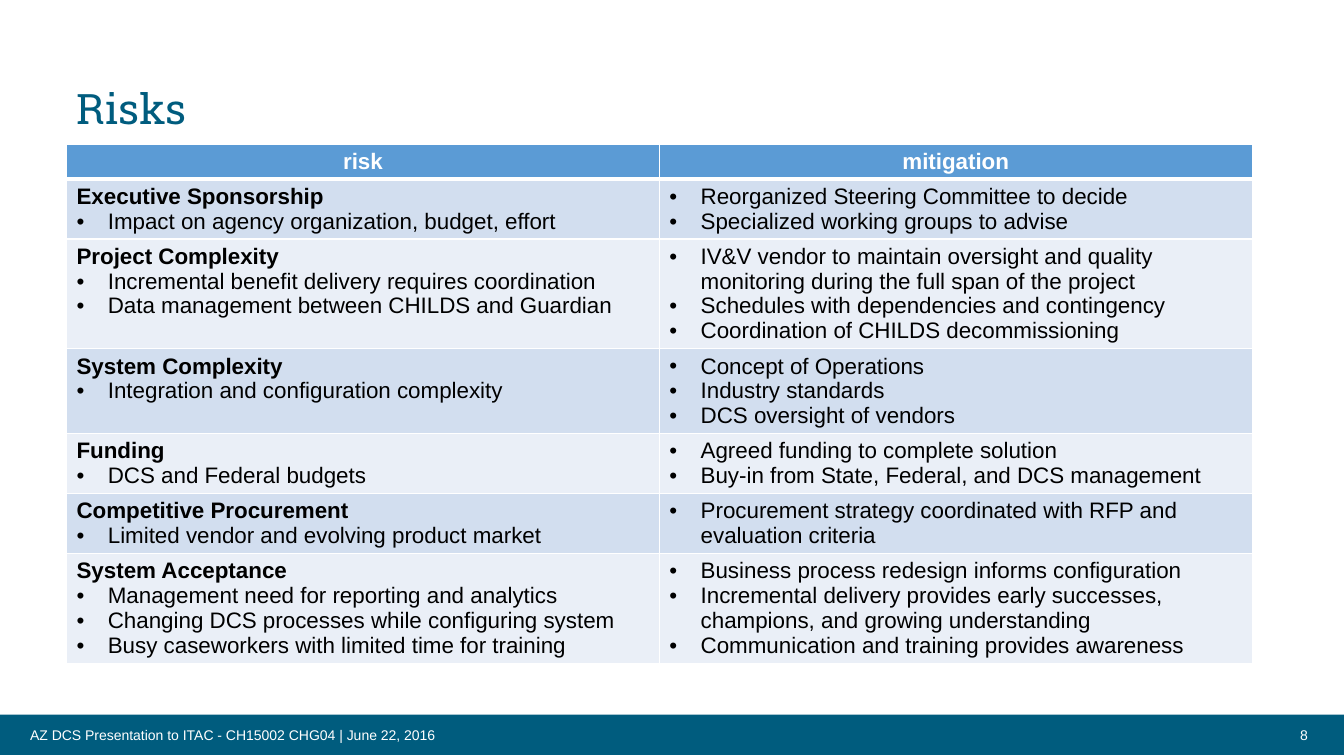
from lxml import etree
from pptx import Presentation
from pptx.dml.color import RGBColor
from pptx.enum import shapes, text
from pptx.oxml import ns
from pptx.util import Inches, Pt

TEAL = RGBColor(0x00, 0x5C, 0x7E)
WHITE = RGBColor(0xFF, 0xFF, 0xFF)
BLACK = RGBColor(0x00, 0x00, 0x00)
HEADER_BLUE = RGBColor(0x5B, 0x9B, 0xD5)
BANDS = (RGBColor(0xD2, 0xDE, 0xEF), RGBColor(0xEA, 0xEF, 0xF7))

HEADINGS = ("risk", "mitigation")
# Each risk: name, its points, its mitigations, row height
RISKS = [
    ("Executive Sponsorship",
     ["Impact on agency organization, budget, effort"],
     ["Reorganized Steering Committee to decide",
      "Specialized working groups to advise"], 0.59),
    ("Project Complexity",
     ["Incremental benefit delivery requires coordination",
      "Data management between CHILDS and Guardian"],
     ["IV&V vendor to maintain oversight and quality monitoring "
      "during the full span of the project",
      "Schedules with dependencies and contingency",
      "Coordination of CHILDS decommissioning"], 1.09),
    ("System Complexity",
     ["Integration and configuration complexity"],
     ["Concept of Operations", "Industry standards", "DCS oversight of vendors"], 0.84),
    ("Funding",
     ["DCS and Federal budgets"],
     ["Agreed funding to complete solution",
      "Buy-in from State, Federal, and DCS management"], 0.59),
    ("Competitive Procurement",
     ["Limited vendor and evolving product market"],
     ["Procurement strategy coordinated with RFP and evaluation criteria"], 0.59),
    ("System Acceptance",
     ["Management need for reporting and analytics",
      "Changing DCS processes while configuring system",
      "Busy caseworkers with limited time for training"],
     ["Business process redesign informs configuration",
      "Incremental delivery provides early successes, champions, "
      "and growing understanding",
      "Communication and training provides awareness"], 1.09),
]
HEADER_HEIGHT = 0.34


class RiskSlide:
    body_font = "Arial"
    title_font = "Roboto Slab"
    body_size = 16
    footer_size = 10
    bullet_indent = Inches(0.31)

    def __init__(self, deck):
        self.slide = deck.slides.add_slide(deck.slide_layouts[5])

    def add_run(self, paragraph, words, size, color, bold=False, font=body_font):
        run = paragraph.add_run()
        run.text = words
        run.font.name = font
        run.font.size = Pt(size)
        run.font.bold = bold
        run.font.color.rgb = color

    def title(self, words, left, top, width, height):
        heading = self.slide.shapes.title
        heading.left, heading.top = Inches(left), Inches(top)
        heading.width, heading.height = Inches(width), Inches(height)
        heading.text_frame.vertical_anchor = text.MSO_ANCHOR.MIDDLE
        paragraph = heading.text_frame.paragraphs[0]
        paragraph.alignment = text.PP_ALIGN.LEFT
        paragraph.line_spacing = 0.9
        self.add_run(paragraph, words, 30, TEAL, font=self.title_font)

    def bar(self, left, top, width, height):
        band = self.slide.shapes.add_shape(
            shapes.MSO_SHAPE.RECTANGLE,
            Inches(left), Inches(top), Inches(width), Inches(height))
        band.shadow.inherit = False
        band.fill.solid()
        band.fill.fore_color.rgb = TEAL
        band.line.fill.background()

    def footer(self, words, left, width, alignment):
        note = self.slide.shapes.add_textbox(
            Inches(left), Inches(7.16), Inches(width), Inches(0.2))
        note.text_frame.word_wrap = True
        paragraph = note.text_frame.paragraphs[0]
        paragraph.alignment = alignment
        self.add_run(paragraph, words, self.footer_size, WHITE)

    def style_cell(self, cell, fill, bottom=1):
        """Give the cell white borders (bottom width in points) and a fill."""
        properties = cell._tc.get_or_add_tcPr()
        for side, points in (("L", 1), ("R", 1), ("T", 1), ("B", bottom)):
            border = etree.SubElement(properties, ns.qn(f"a:ln{side}"), w=str(Pt(points)))
            paint = etree.SubElement(border, ns.qn("a:solidFill"))
            etree.SubElement(paint, ns.qn("a:srgbClr"), val=str(WHITE))
        cell.fill.solid()
        cell.fill.fore_color.rgb = fill

    def add_bullet(self, paragraph):
        properties = paragraph._p.get_or_add_pPr()
        properties.set("marL", str(self.bullet_indent))
        properties.set("indent", str(-self.bullet_indent))
        etree.SubElement(properties, ns.qn("a:buFont"), typeface=self.body_font)
        etree.SubElement(properties, ns.qn("a:buChar"), char="•")

    def fill_cell(self, cell, points, name=None):
        """Write an optional bold name followed by bulleted points."""
        lines = ([(name, True)] if name else []) + [(point, False) for point in points]
        frame = cell.text_frame
        for index, (words, is_name) in enumerate(lines):
            paragraph = frame.add_paragraph() if index else frame.paragraphs[0]
            if not is_name:
                self.add_bullet(paragraph)
            self.add_run(paragraph, words, self.body_size, BLACK, bold=is_name)

    def risk_table(self, left, top, width):
        heights = [HEADER_HEIGHT] + [risk[-1] for risk in RISKS]
        table = self.slide.shapes.add_table(
            len(heights), len(HEADINGS), Inches(left), Inches(top),
            Inches(width), Inches(sum(heights))).table
        for row, height in zip(table.rows, heights):
            row.height = Inches(height)
        for column, heading in enumerate(HEADINGS):
            cell = table.cell(0, column)
            self.style_cell(cell, HEADER_BLUE, bottom=3)
            paragraph = cell.text_frame.paragraphs[0]
            paragraph.alignment = text.PP_ALIGN.CENTER
            self.add_run(paragraph, heading, self.body_size, WHITE, bold=True)
        for row, (name, points, mitigations, _) in enumerate(RISKS, start=1):
            risk_cell, mitigation_cell = table.cell(row, 0), table.cell(row, 1)
            for cell in (risk_cell, mitigation_cell):
                self.style_cell(cell, BANDS[(row - 1) % 2])
            self.fill_cell(risk_cell, points, name)
            self.fill_cell(mitigation_cell, mitigations)


def main():
    deck = Presentation()
    deck.slide_width, deck.slide_height = Inches(13.33), Inches(7.5)
    risks = RiskSlide(deck)
    risks.bar(0, 7.09, 13.33, 0.4)
    risks.risk_table(0.66, 1.43, 11.76)
    risks.title("Risks", 0.66, 0.71, 11.76, 0.79)
    risks.footer("AZ DCS Presentation to ITAC - CH15002 CHG04 | June 22, 2016",
                 0.2, 9.11, text.PP_ALIGN.LEFT)
    risks.footer("8", 10.82, 2.25, text.PP_ALIGN.RIGHT)
    deck.save("out.pptx")


if __name__ == "__main__":
    main()
